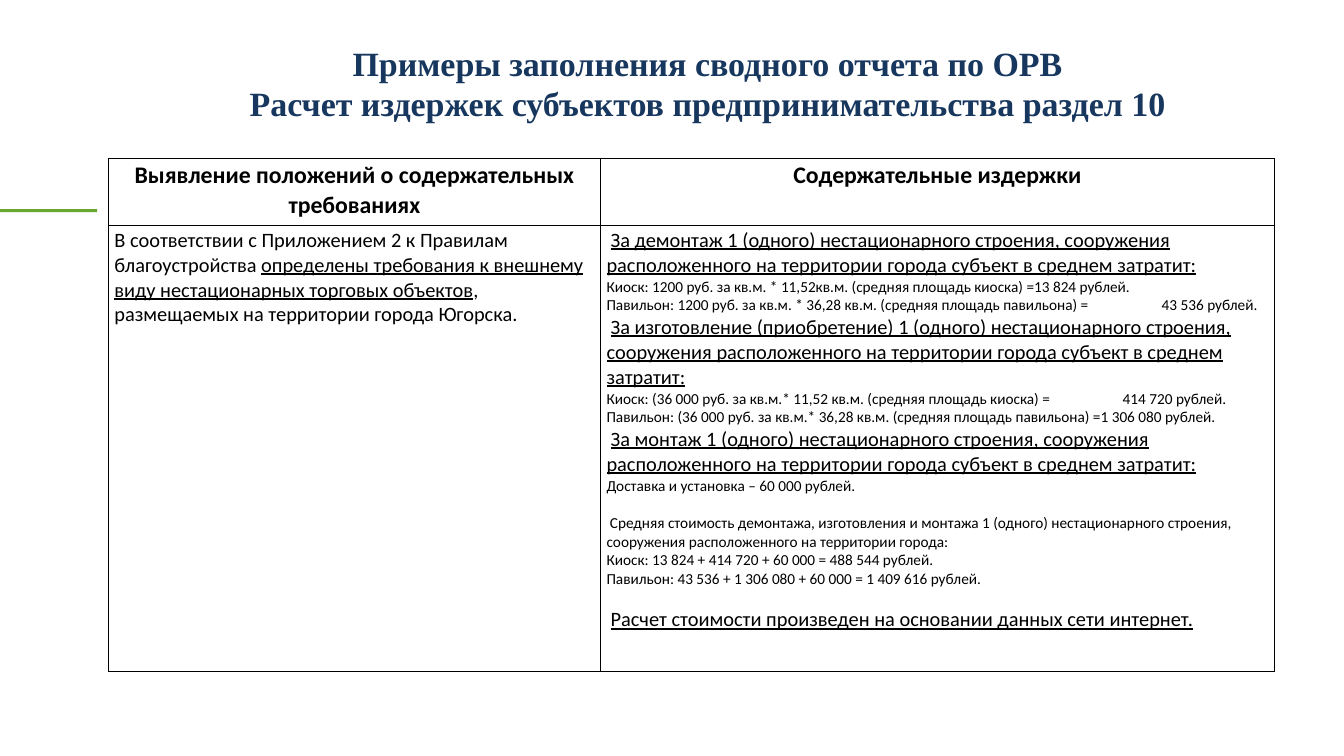
from dataclasses import dataclass

from lxml import etree
from pptx import Presentation
from pptx.dml.color import RGBColor
from pptx.enum import shapes, text
from pptx.oxml import ns
from pptx.util import Cm, Pt

COLORS = {"title": "17375E", "text": "000000", "border": "000000", "accent": "66A82F"}
TITLE = (
    "Примеры заполнения сводного отчета по ОРВ",
    "Расчет издержек субъектов предпринимательства раздел 10",
)
COLUMNS = (20.45, 28.0)
ROWS = (2.77, 18.54)
BLANK_LINE = 22


@dataclass(frozen=True)
class Run:
    text: str
    underline: bool = False


@dataclass(frozen=True)
class Para:
    runs: tuple[Run, ...]
    size: int = 18
    bold: bool = False
    centered: bool = False
    indent: float = 0
    before: float = 0
    tab: float = 0


def header(label: str) -> list[Para]:
    return [Para((Run(label),), size=28, bold=True, centered=True)]


def heading(label: str, before: float = 0) -> Para:
    return Para((Run(label, True),), size=24, indent=0.17, before=before)


def line(label: str, tab: float = 0, indent: float = 0, before: float = 0) -> Para:
    return Para((Run(label),), tab=tab, indent=indent, before=before)


REQUIREMENTS = [
    Para(
        (
            Run("В соответствии с Приложением 2 к Правилам благоустройства "),
            Run("определены требования к внешнему виду нестационарных торговых объектов", True),
            Run(", размещаемых на территории города Югорска."),
        ),
        size=24,
    )
]
COSTS = [
    heading("За демонтаж 1 (одного) нестационарного строения, сооружения расположенного "
            "на территории города субъект в среднем затратит:"),
    line("Киоск: 1200 руб. за кв.м. * 11,52кв.м. (средняя площадь киоска) =13 824 рублей."),
    line("Павильон: 1200 руб. за кв.м. * 36,28 кв.м. (средняя площадь павильона) =\t43 536 рублей.",
         tab=23.07),
    heading("За изготовление (приобретение) 1 (одного) нестационарного строения, сооружения "
            "расположенного на территории города субъект в среднем затратит:"),
    line("Киоск: (36 000 руб. за кв.м.* 11,52 кв.м. (средняя площадь киоска) =\t414 720 рублей.",
         tab=21.45),
    line("Павильон: (36 000 руб. за кв.м.* 36,28 кв.м. (средняя площадь павильона) "
         "=1 306 080 рублей."),
    heading("За монтаж 1 (одного) нестационарного строения, сооружения расположенного "
            "на территории города субъект в среднем затратит:"),
    line("Доставка и установка – 60 000 рублей."),
    line("Средняя стоимость демонтажа, изготовления и монтажа 1 (одного) нестационарного "
         "строения, сооружения расположенного на территории города:",
         indent=0.14, before=BLANK_LINE),
    line("Киоск: 13 824 + 414 720 + 60 000 = 488 544 рублей."),
    line("Павильон: 43 536 + 1 306 080 + 60 000 = 1 409 616 рублей."),
    heading("Расчет стоимости произведен на основании данных сети интернет.", before=BLANK_LINE),
]
CELLS = (
    (header("Выявление положений о содержательных требованиях"), header("Содержательные издержки")),
    (REQUIREMENTS, COSTS),
)


def set_font(p, name: str, size: float, color: str, bold: bool) -> None:
    p.font.name = name
    p.font.size = Pt(size)
    p.font.bold = bold
    p.font.color.rgb = RGBColor.from_string(COLORS[color])


def add_title(s) -> None:
    sp = s.shapes.title
    sp.left, sp.top, sp.width, sp.height = Cm(9.86), Cm(1.63), Cm(39.09), Cm(3.68)
    tf = sp.text_frame
    tf.word_wrap = True
    tf.auto_size = text.MSO_AUTO_SIZE.NONE
    tf.vertical_anchor = text.MSO_ANCHOR.TOP
    tf.text = "\n".join(TITLE)
    for p in tf.paragraphs:
        p.alignment = text.PP_ALIGN.CENTER
        set_font(p, "Times New Roman", 40, "title", True)


def add_accent(s) -> None:
    sp = s.shapes.add_shape(shapes.MSO_SHAPE.RECTANGLE, 0, Cm(8.69), Cm(4.04), Cm(0.13))
    sp.shadow.inherit = False
    sp.fill.solid()
    sp.fill.fore_color.rgb = RGBColor.from_string(COLORS["accent"])
    sp.line.fill.background()


def set_borders(cell) -> None:
    tc_pr = cell._tc.get_or_add_tcPr()
    for side in ("lnL", "lnR", "lnT", "lnB"):
        ln = etree.SubElement(tc_pr, ns.qn(f"a:{side}"), w=str(Pt(1)))
        fill = etree.SubElement(ln, ns.qn("a:solidFill"))
        etree.SubElement(fill, ns.qn("a:srgbClr"), val=COLORS["border"])


def write_para(p, para: Para) -> None:
    p_pr = p._p.get_or_add_pPr()
    if para.indent:
        p_pr.set("marL", "0")
        p_pr.set("indent", str(Cm(para.indent)))
    if para.before:
        p.space_before = Pt(para.before)
    if para.tab:
        tabs = etree.SubElement(p_pr, ns.qn("a:tabLst"))
        etree.SubElement(tabs, ns.qn("a:tab"), pos=str(Cm(para.tab)), algn="l")
    p.alignment = text.PP_ALIGN.CENTER if para.centered else text.PP_ALIGN.LEFT
    set_font(p, "Calibri", para.size, "text", para.bold)
    for run in para.runs:
        r = p.add_run()
        r.text = run.text
        if run.underline:
            r.font.underline = True


def fill_cell(cell, paras: list[Para]) -> None:
    set_borders(cell)
    cell.fill.background()
    tf = cell.text_frame
    for i, para in enumerate(paras):
        write_para(tf.add_paragraph() if i else tf.paragraphs[0], para)


def add_cost_table(s) -> None:
    table = s.shapes.add_table(
        len(ROWS), len(COLUMNS), Cm(4.5), Cm(6.58), Cm(sum(COLUMNS)), Cm(sum(ROWS))
    ).table
    table.first_row = False
    table.horz_banding = False
    for column, width in zip(table.columns, COLUMNS):
        column.width = Cm(width)
    for row, height, contents in zip(table.rows, ROWS, CELLS):
        row.height = Cm(height)
        for cell, paras in zip(row.cells, contents):
            fill_cell(cell, paras)


def main() -> None:
    prs = Presentation()
    prs.slide_width, prs.slide_height = Cm(55.85), Cm(31.42)
    s = prs.slides.add_slide(prs.slide_layouts[5])
    add_accent(s)
    add_title(s)
    add_cost_table(s)
    prs.save("out.pptx")


if __name__ == "__main__":
    main()
